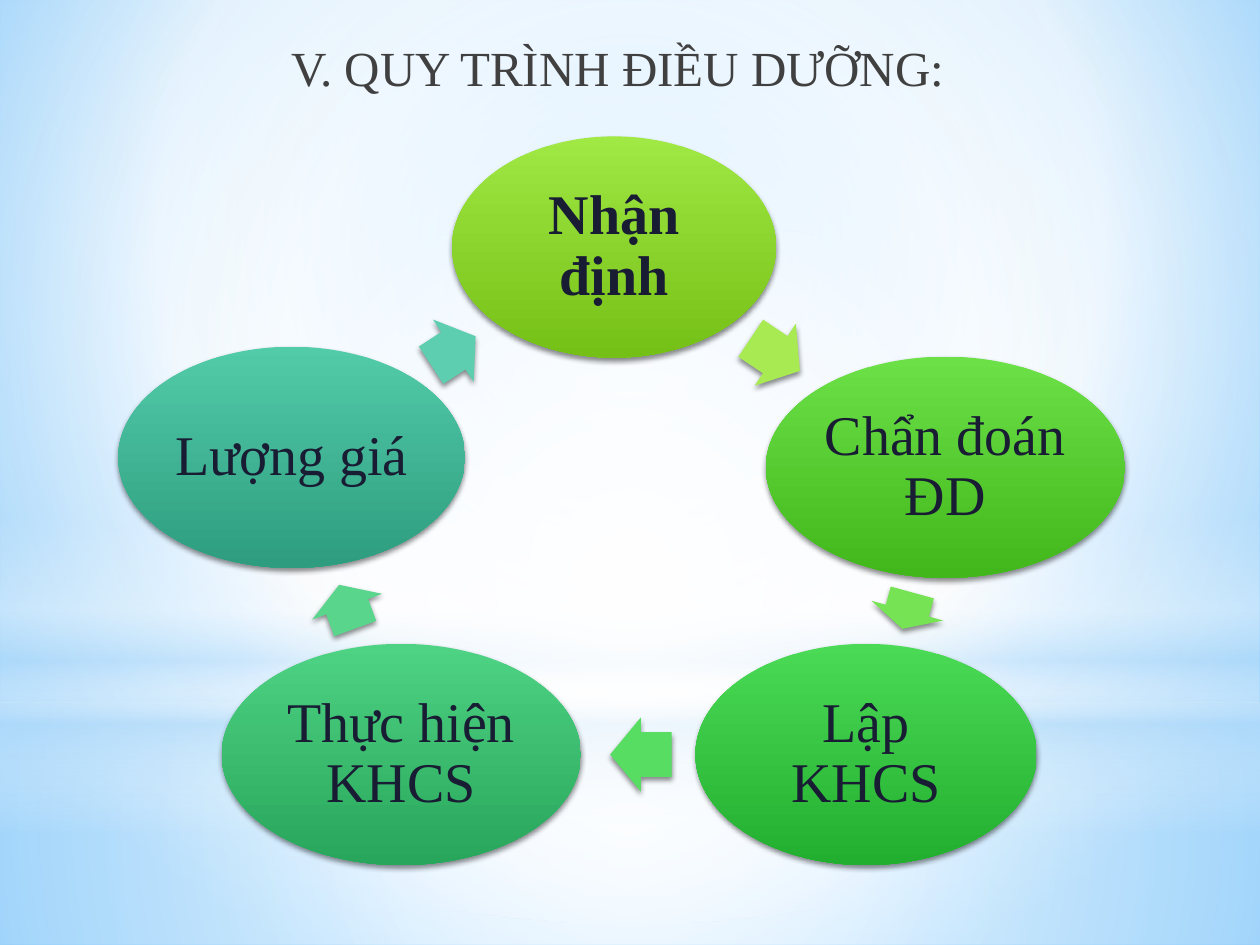
from lxml.etree import SubElement
from pptx import Presentation
from pptx.dml.color import RGBColor
from pptx.enum.shapes import MSO_SHAPE
from pptx.enum.text import MSO_ANCHOR, PP_ALIGN
from pptx.oxml import parse_xml
from pptx.oxml.ns import nsdecls, qn
from pptx.util import Cm, Pt

FONT = "Times New Roman"
COLORS = {"title": "404040", "text": "191D34", "white": "FFFFFF", "mist": "B4DCFA",
          "sky": "9ED5FF", "blue": "5BB9FF", "shadow": "000000"}
WHITE, MIST = COLORS["white"], COLORS["mist"]


def set_gradient(parent, stops, focus=None):
    """Swap the plain fill for (position, colour, opacity) stops; focus is l, t, r, b."""
    gs = "".join(f'<a:gs pos="{pos * 1000}"><a:srgbClr val="{color}">'
                 f'<a:alpha val="{alpha * 1000}"/></a:srgbClr></a:gs>'
                 for pos, color, alpha in stops)
    if focus:
        sides = " ".join(f'{k}="{v * 1000}"' for k, v in zip("ltrb", focus))
        way = f'<a:path path="circle"><a:fillToRect {sides}/></a:path>'
    else:
        way = '<a:lin ang="5400000" scaled="0"/>'
    grad = parse_xml(f'<a:gradFill {nsdecls("a")} rotWithShape="1">'
                     f'<a:gsLst>{gs}</a:gsLst>{way}</a:gradFill>')
    parent.replace(parent.find(qn("a:solidFill")), grad)


def add_plain(kind, x, y, w, h, color, shadow=False):
    """Add a shape without outline, placed in centimetres."""
    s = slide.shapes.add_shape(kind, Cm(x), Cm(y), Cm(w), Cm(h))
    s.fill.solid()
    s.fill.fore_color.rgb = RGBColor.from_string(color)
    s.line.fill.background()
    s.shadow.inherit = False
    if shadow:
        effects = s._element.spPr.find(qn("a:effectLst"))
        outer = SubElement(effects, qn("a:outerShdw"), blurRad=str(Pt(3.1)),
                           dist=str(Pt(1.8)), dir="5400000", rotWithShape="0")
        clr = SubElement(outer, qn("a:srgbClr"), val=COLORS["shadow"])
        SubElement(clr, qn("a:alpha"), val="45000")
    return s


prs = Presentation()
prs.slide_width, prs.slide_height = Cm(25.4), Cm(19.05)
slide = prs.slides.add_slide(prs.slide_layouts[6])

# Background
slide.background.fill.solid()
set_gradient(slide._element.find(".//" + qn("p:bgPr")),
             [(0, COLORS["sky"], 100), (60, WHITE, 100), (100, COLORS["blue"], 100)],
             (20, 10, 20, 60))

# Translucent layers: shape, top, height, stops, focus
CENTRE = (50, 50, 50, 50)
layers = [
    (MSO_SHAPE.RECTANGLE, 14.17, 4.88,
     [(0, WHITE, 91), (37, WHITE, 76), (100, MIST, 79)], CENTRE),
    (MSO_SHAPE.RECTANGLE, 0, 14.17,
     [(0, WHITE, 89), (48, WHITE, 62), (100, MIST, 79)], CENTRE),
    (MSO_SHAPE.RECTANGLE, 10.46, 6.35,
     [(0, WHITE, 0), (29, WHITE, 30), (45, MIST, 40),
      (55, WHITE, 26), (65, MIST, 60), (100, WHITE, 0)], None),
    (MSO_SHAPE.OVAL, 4.45, 14.17, [(0, WHITE, 100), (56, WHITE, 0)], CENTRE),
]
for kind, top, height, stops, focus in layers:
    s = add_plain(kind, 0, top, 25.4, height, WHITE)
    set_gradient(s._element.spPr, stops, focus)

# Title
tf = slide.shapes.add_textbox(Cm(0.64), Cm(0.64), Cm(23.5), Cm(1.9)).text_frame
tf.word_wrap = True
p = tf.paragraphs[0]
p.text = "V. QUY TRÌNH ĐIỀU DƯỠNG:"
p.alignment = PP_ALIGN.CENTER
p._p.get_or_add_pPr().set("marL", str(Cm(0.13)))
p.font.name, p.font.size = FONT, Pt(28)
p.font.color.rgb = RGBColor.from_string(COLORS["title"])

# Cycle: step (text, centre x, centre y, width, top colour, bottom colour),
# then the arrow after it (centre x, centre y, length, rotation, colour)
STEP_H, ARROW_H = 4.46, 1.5
cycle = [
    (("Nhận định", 12.38, 4.98, 6.53, "A0E844", "75C016"),
     (15.63, 7.15, 1.19, 33.6, "A7EA52")),
    (("Chẩn đoán ĐD", 19.06, 9.42, 7.24, "6CE147", "41B71C"),
     (18.29, 12.31, 0.76, 105.4, "76E354")),
    (("Lập KHCS", 17.46, 15.21, 6.88, "4ADA56", "22AE2E"),
     (12.92, 15.21, 1.24, 180, "57DD62")),
    (("Thực hiện KHCS", 8.09, 15.21, 7.24, "4ED283", "28A65B"),
     (7.0, 12.23, 0.94, 249.8, "5AD58C")),
    (("Lượng giá", 5.88, 9.22, 6.99, "52CBA9", "2E9D7F"),
     (9.14, 7.07, 1.07, 326.9, "5DCEAF")),
]
for i, (step, arrow) in enumerate(cycle):
    text, x, y, w, light, dark = step
    s = add_plain(MSO_SHAPE.OVAL, x - w / 2, y - STEP_H / 2, w, STEP_H, light, shadow=True)
    set_gradient(s._element.spPr, [(0, light, 100), (100, dark, 100)])
    tf = s.text_frame
    tf.word_wrap = True
    tf.vertical_anchor = MSO_ANCHOR.MIDDLE
    tf.margin_left = tf.margin_right = tf.margin_top = tf.margin_bottom = Cm(0.1)
    p = tf.paragraphs[0]
    p.text = text
    p.alignment = PP_ALIGN.CENTER
    p.line_spacing = 0.9
    p.font.name, p.font.size, p.font.bold = FONT, Pt(32), i == 0
    p.font.color.rgb = RGBColor.from_string(COLORS["text"])

    x, y, w, angle, color = arrow
    s = add_plain(MSO_SHAPE.RIGHT_ARROW, x - w / 2, y - ARROW_H / 2, w, ARROW_H, color,
                  shadow=True)
    s.adjustments[0], s.adjustments[1] = 0.6, 0.5
    s.rotation = angle

prs.save("out.pptx")
